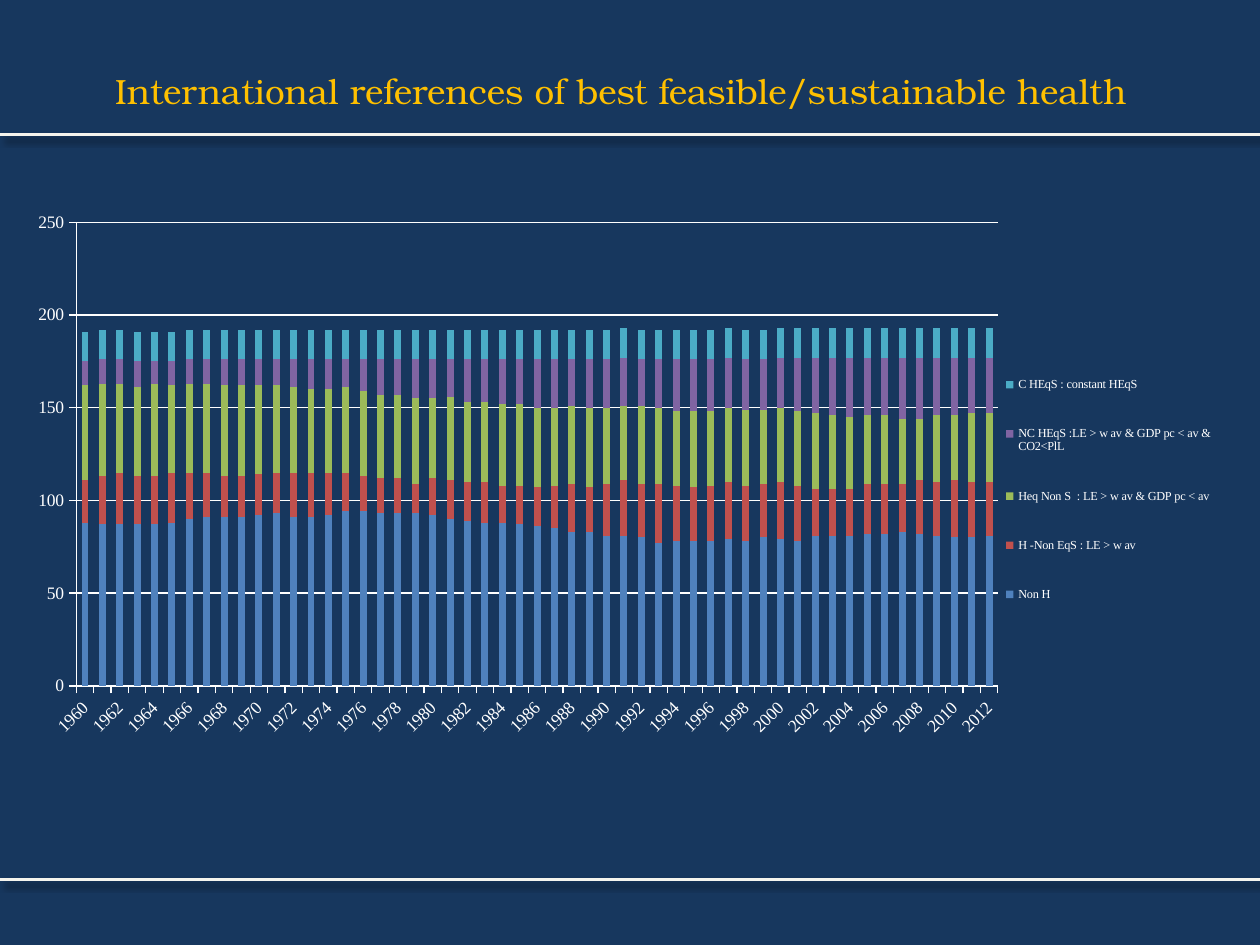
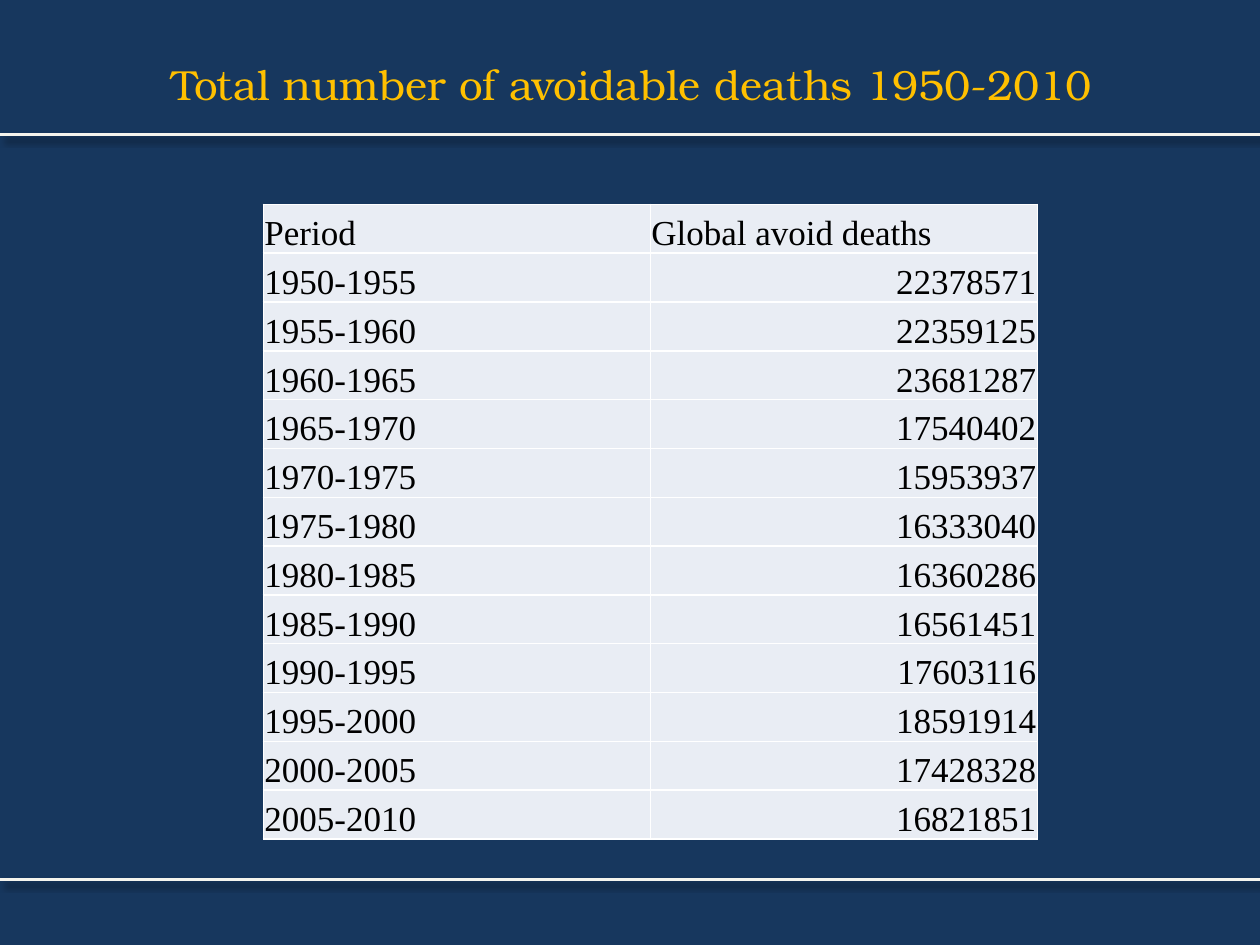
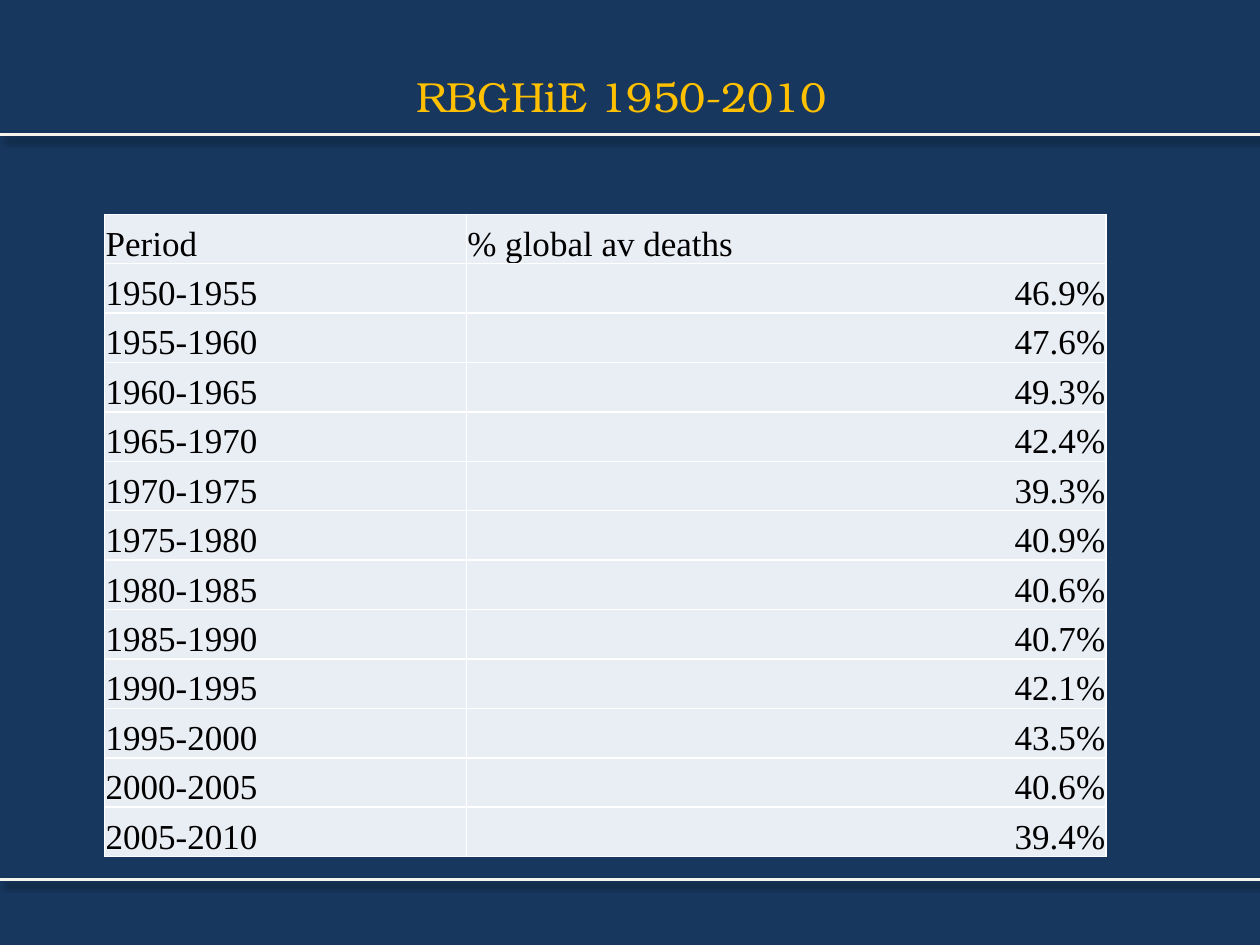
import pptx
import pptx.chart.data
import pptx.dml.color
import pptx.enum.chart
import pptx.enum.shapes
import pptx.enum.text
import pptx.oxml
import pptx.oxml.ns
import pptx.util
from lxml import etree
from pptx.util import Cm, Pt

RGBColor = pptx.dml.color.RGBColor
NAVY = RGBColor(0x17, 0x37, 0x5E)
GOLD = RGBColor(0xFF, 0xC0, 0x00)
IVORY = RGBColor(0xF5, 0xF4, 0xED)
WHITE = RGBColor(0xFF, 0xFF, 0xFF)
BLACK = RGBColor(0x00, 0x00, 0x00)
PALE_BLUE = RGBColor(0xE9, 0xED, 0xF4)
BLUE = RGBColor(0x4F, 0x81, 0xBD)
RED = RGBColor(0xC0, 0x50, 0x4D)
GREEN = RGBColor(0x9B, 0xBB, 0x59)
PURPLE = RGBColor(0x80, 0x64, 0xA2)
TEAL = RGBColor(0x4B, 0xAC, 0xC6)

TITLE_FONT = "TeX Gyre Bonum"
BODY_FONT = "Times New Roman"
RULE_HEIGHTS = (17.73, 2.72)
A = 'xmlns:a="http://schemas.openxmlformats.org/drawingml/2006/main"'
RULE_SHADOW = (
    f'<a:effectLst {A}><a:outerShdw blurRad="50800" dist="50800" dir="2400000" '
    'algn="tl" rotWithShape="0"><a:srgbClr val="000000"><a:alpha val="40000"/>'
    "</a:srgbClr></a:outerShdw></a:effectLst>"
)

deck = pptx.Presentation()
deck.slide_width = Cm(25.4)
deck.slide_height = Cm(19.05)
deck.slide_master.background.fill.solid()
deck.slide_master.background.fill.fore_color.rgb = NAVY


def add_page(text, left, top, height, size):
    """Add a page with its two shadowed rules and a title."""
    page = deck.slides.add_slide(deck.slide_layouts[5])
    for y in RULE_HEIGHTS:
        rule = page.shapes.add_connector(
            pptx.enum.shapes.MSO_CONNECTOR.STRAIGHT, 0, Cm(y), deck.slide_width, Cm(y))
        rule.line.color.rgb = IVORY
        rule.line.width = Pt(1.75)
        rule._element.spPr.append(pptx.oxml.parse_xml(RULE_SHADOW))
    title = page.shapes.title
    title.left, title.top = Cm(left), Cm(top)
    title.width, title.height = Cm(22.86), Cm(height)
    frame = title.text_frame
    frame.text = text
    frame.auto_size = pptx.enum.text.MSO_AUTO_SIZE.NONE
    frame.vertical_anchor = pptx.enum.text.MSO_ANCHOR.MIDDLE
    para = frame.paragraphs[0]
    para.alignment = pptx.enum.text.PP_ALIGN.CENTER
    para.font.name = TITLE_FONT
    para.font.size = Pt(size)
    para.font.color.rgb = GOLD
    return page


def add_period_table(page, heading, values, left, top, widths, height):
    """Add a table with one value for each five-year period."""
    periods = [f"{year}-{year + 5}" for year in range(1950, 2010, 5)]
    rows = [("Period", heading), *zip(periods, values)]
    table = page.shapes.add_table(
        len(rows), 2, Cm(left), Cm(top), Cm(sum(widths)), Cm(height)).table
    for column, width in zip(table.columns, widths):
        column.width = Cm(width)
    for row_index, row in enumerate(rows):
        for column_index, text in enumerate(row):
            cell = table.cell(row_index, column_index)
            cell.text = text
            cell.margin_left = cell.margin_right = cell.margin_top = Cm(0.02)
            cell.margin_bottom = 0
            cell.vertical_anchor = pptx.enum.text.MSO_ANCHOR.BOTTOM
            for side in "LRTB":
                cell._tc.get_or_add_tcPr().append(pptx.oxml.parse_xml(
                    f'<a:ln{side} {A} w="12700"><a:solidFill><a:srgbClr val="{WHITE}"/>'
                    f"</a:solidFill></a:ln{side}>"))
            cell.fill.solid()
            cell.fill.fore_color.rgb = PALE_BLUE
            para = cell.text_frame.paragraphs[0]
            para.font.name = BODY_FONT
            para.font.size = Pt(20)
            para.font.bold = False
            para.font.color.rgb = BLACK
            if row_index and column_index:
                para.alignment = pptx.enum.text.PP_ALIGN.RIGHT


# Health references by year
page = add_page("International references of best feasible/sustainable health",
                1.09, 0.53, 2.59, 20)
years = range(1960, 2013)
health_groups = [
    ("Non H", BLUE,
     [88, 87, 87, 87, 87, 88, 90, 91, 91, 91, 92, 93, 91, 91, 92, 94, 94, 93,
      93, 93, 92, 90, 89, 88, 88, 87, 86, 85, 83, 83, 81, 81, 80, 77, 78, 78,
      78, 79, 78, 80, 79, 78, 81, 81, 81, 82, 82, 83, 82, 81, 80, 80, 81]),
    ("H -Non EqS : LE > w av", RED,
     [23, 26, 28, 26, 26, 27, 25, 24, 22, 22, 22, 22, 24, 24, 23, 21, 19, 19,
      19, 16, 20, 21, 21, 22, 20, 21, 21, 23, 26, 24, 28, 30, 29, 32, 30, 29,
      30, 31, 30, 29, 31, 30, 25, 25, 25, 27, 27, 26, 29, 29, 31, 30, 29]),
    ("Heq Non S  : LE > w av & GDP pc < av", GREEN,
     [51, 50, 48, 48, 50, 47, 48, 48, 49, 49, 48, 47, 46, 45, 45, 46, 46, 45,
      45, 46, 43, 45, 43, 43, 44, 44, 43, 42, 42, 43, 41, 40, 42, 41, 40, 41,
      40, 40, 41, 40, 40, 40, 41, 40, 39, 37, 37, 35, 33, 36, 35, 37, 37]),
    ("NC HEqS :LE > w av & GDP pc < av & CO2<PlL", PURPLE,
     [13, 13, 13, 14, 12, 13, 13, 13, 14, 14, 14, 14, 15, 16, 16, 15, 17, 19,
      19, 21, 21, 20, 23, 23, 24, 24, 26, 26, 25, 26, 26, 26, 25, 26, 28, 28,
      28, 27, 27, 27, 27, 29, 30, 31, 32, 31, 31, 33, 33, 31, 31, 30, 30]),
    ("C HEqS : constant HEqS", TEAL, [16] * len(years)),
]
chart_data = pptx.chart.data.CategoryChartData()
chart_data.categories = [str(year) for year in years]
for name, _, values in health_groups:
    chart_data.add_series(name, values)
chart = page.shapes.add_chart(
    pptx.enum.chart.XL_CHART_TYPE.COLUMN_STACKED,
    Cm(0.3), Cm(4.04), Cm(24.77), Cm(11), chart_data).chart
chart.has_title = False
chart.font.name = BODY_FONT
chart.font.size = Pt(10)
chart.font.color.rgb = WHITE
plot = chart.plots[0]
plot.vary_by_categories = False
plot.gap_width = 150
plot.overlap = 100
for series, (_, color, _) in zip(plot.series, health_groups):
    series.format.fill.solid()
    series.format.fill.fore_color.rgb = color
for axis in (chart.category_axis, chart.value_axis):
    axis.major_tick_mark = pptx.enum.chart.XL_TICK_MARK.OUTSIDE
    axis.format.line.color.rgb = WHITE
    axis.format.line.width = Pt(0.75)
    axis.tick_labels.font.size = Pt(10)
chart.category_axis._element.txPr.bodyPr.set("rot", "-2700000")
value_axis = chart.value_axis
value_axis.minimum_scale, value_axis.maximum_scale, value_axis.major_unit = 0, 250, 50
value_axis.has_major_gridlines = True
value_axis.major_gridlines.format.line.color.rgb = WHITE
value_axis.major_gridlines.format.line.width = Pt(0.75)
chart.has_legend = True
legend = chart.legend
legend.position = pptx.enum.chart.XL_LEGEND_POSITION.RIGHT
legend.include_in_layout = False
legend.font.name = BODY_FONT
legend.font.size = Pt(7)
legend.font.color.rgb = WHITE

plot_area = chart._chartSpace.chart.plotArea
for old_layout in plot_area.findall(pptx.oxml.ns.qn("c:layout")):
    plot_area.remove(old_layout)
for old_layout in legend._element.findall(pptx.oxml.ns.qn("c:layout")):
    legend._element.remove(old_layout)
for parent, index, target, bounds in (
    (plot_area, 0, "inner", (0.05, 0.04, 0.75, 0.85)),
    (legend._element, 1, None, (0.79, 0.26, 0.2, 0.54)),
):
    layout = etree.Element(pptx.oxml.ns.qn("c:layout"))
    manual = etree.SubElement(layout, pptx.oxml.ns.qn("c:manualLayout"))
    settings = [("layoutTarget", target)] if target else []
    settings += [("xMode", "edge"), ("yMode", "edge"), *zip("xywh", bounds)]
    for tag, value in settings:
        etree.SubElement(manual, pptx.oxml.ns.qn(f"c:{tag}")).set("val", str(value))
    parent.insert(index, layout)

# Number of avoidable deaths
page = add_page("Total number of avoidable deaths 1950-2010", 1.3, 0.1, 3.18, 24)
add_period_table(
    page, "Global avoid deaths",
    ["22378571", "22359125", "23681287", "17540402", "15953937", "16333040",
     "16360286", "16561451", "17603116", "18591914", "17428328", "16821851"],
    5.31, 4.12, (7.8, 7.8), 12.8)

# Share of avoidable deaths
page = add_page("RBGHiE 1950-2010", 1.09, 0.33, 3.18, 24)
add_period_table(
    page, "% global av deaths",
    ["46.9%", "47.6%", "49.3%", "42.4%", "39.3%", "40.9%",
     "40.6%", "40.7%", "42.1%", "43.5%", "40.6%", "39.4%"],
    2.11, 4.32, (7.29, 12.9), 12.95)

deck.save("out.pptx")
